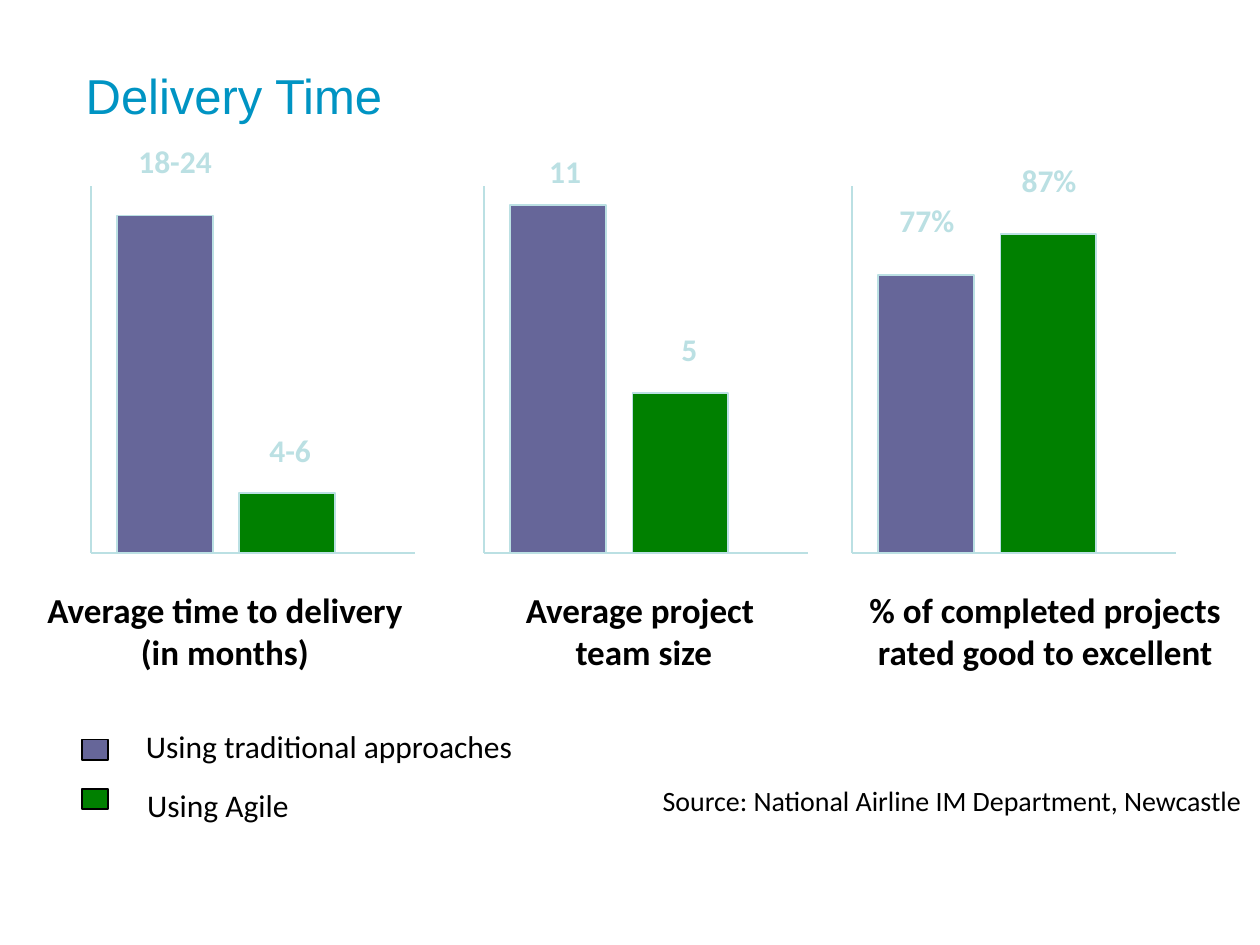
from pptx import Presentation
from pptx.dml.color import RGBColor
from pptx.enum import shapes, text
from pptx.oxml.ns import qn
from pptx.util import Inches, Pt
from lxml import etree

HUES = {"title": "0094C3", "old": "666699", "new": "008000",
        "pale": "BBE0E3", "ink": "000000"}
BASE, TOP = 4.39, 1.48        # foot and head of the axes
SPAN, BAR = 2.57, 0.76        # axis length, bar width
GAPS = {"old": 0.21, "new": 1.18}   # bar offsets from the axis

# axis left, caption (left, width, lines), bars (key, height, label, label box)
PANELS = [
    (0.72, (0.07, 3.43, "Average time to delivery\n(in months)"),
     [("old", 2.68, "18-24", (1, 1.08, 0.83)),
      ("new", 0.48, "4-6", (2.04, 3.37, 0.56))]),
    (3.84, (3.92, 2.38, "Average project \nteam size"),
     [("old", 2.76, "11", (4.26, 1.16, 0.48)),
      ("new", 1.27, "5", (5.31, 2.57, 0.34))]),
    (6.76, (6.64, 3.31, "% of completed projects\nrated good to excellent"),
     [("old", 2.21, "77%", (7.04, 1.55, 0.66)),
      ("new", 2.53, "87%", (8.01, 1.23, 0.66))]),
]
# key, swatch top, text left, text top, text width, words
KEYS = [("old", 5.87, 1.06, 5.72, 3.75, "Using traditional approaches"),
        ("new", 6.26, 1.07, 6.19, 4.93, "Using Agile")]


def hue(key):
    return RGBColor.from_string(HUES[key])


def style(font, size, key, name="Calibri", bold=False):
    font.size, font.name, font.bold = Pt(size), name, bold
    font.color.rgb = hue(key)


def add_text(slide, box, words, size, key="ink", bold=False,
             align=text.PP_ALIGN.LEFT, wrap=False):
    frame = slide.shapes.add_textbox(*map(Inches, box)).text_frame
    frame.word_wrap = wrap
    frame.text = words
    for para in frame.paragraphs:
        para.alignment = align
        for run in para.runs:
            style(run.font, size, key, bold=bold)


def add_rect(slide, box, fill, line):
    rect = slide.shapes.add_shape(shapes.MSO_SHAPE.RECTANGLE,
                                  *map(Inches, box))
    rect.shadow.inherit = False
    rect.fill.solid()
    rect.fill.fore_color.rgb = hue(fill)
    rect.line.color.rgb = hue(line)
    rect.line.width = Pt(1)


def add_line(slide, *ends):
    line = slide.shapes.add_connector(shapes.MSO_CONNECTOR.STRAIGHT,
                                      *map(Inches, ends))
    line.line.color.rgb = hue("pale")
    line.line.width = Pt(1)
    etree.SubElement(line._element.spPr, qn("a:effectLst"))


def add_title(slide, words):
    title = slide.shapes.title
    title.left, title.top = Inches(0.58), Inches(0.42)
    title.width, title.height = Inches(8.5), Inches(0.67)
    frame = title.text_frame
    frame.text = words
    frame.vertical_anchor = text.MSO_ANCHOR.MIDDLE
    para = frame.paragraphs[0]
    para.alignment = text.PP_ALIGN.LEFT
    style(para.runs[0].font, 28, "title", "Arial")


def add_panel(slide, left, caption, bars):
    for key, high, label, (x, y, wide) in bars:
        add_rect(slide, (left + GAPS[key], BASE - high, BAR, high),
                 key, "pale")
        add_text(slide, (x, y, wide, 0.4), label, 18, "pale", True)
    # Axes
    add_line(slide, left, TOP, left, BASE)
    add_line(slide, left, BASE, left + SPAN, BASE)
    # Caption
    x, wide, words = caption
    add_text(slide, (x, 4.62, wide, 0.77), words, 20, bold=True,
             align=text.PP_ALIGN.CENTER)


def main():
    deck = Presentation()
    deck.slide_width, deck.slide_height = Inches(10), Inches(7.5)
    slide = deck.slides.add_slide(deck.slide_layouts[5])
    add_title(slide, "Delivery Time")

    # Three bar panels
    for panel in PANELS:
        add_panel(slide, *panel)

    # Legend
    for key, top, x, y, wide, words in KEYS:
        add_rect(slide, (0.65, top, 0.21, 0.16), key, "ink")
        add_text(slide, (x, y, wide, 0.4), words, 18, wrap=True)

    # Source line
    add_text(slide, (4.7, 6.17, 5.3, 0.37),
             "Source: National Airline IM Department, Newcastle ", 16,
             align=text.PP_ALIGN.RIGHT, wrap=True)
    deck.save("out.pptx")


if __name__ == "__main__":
    main()
